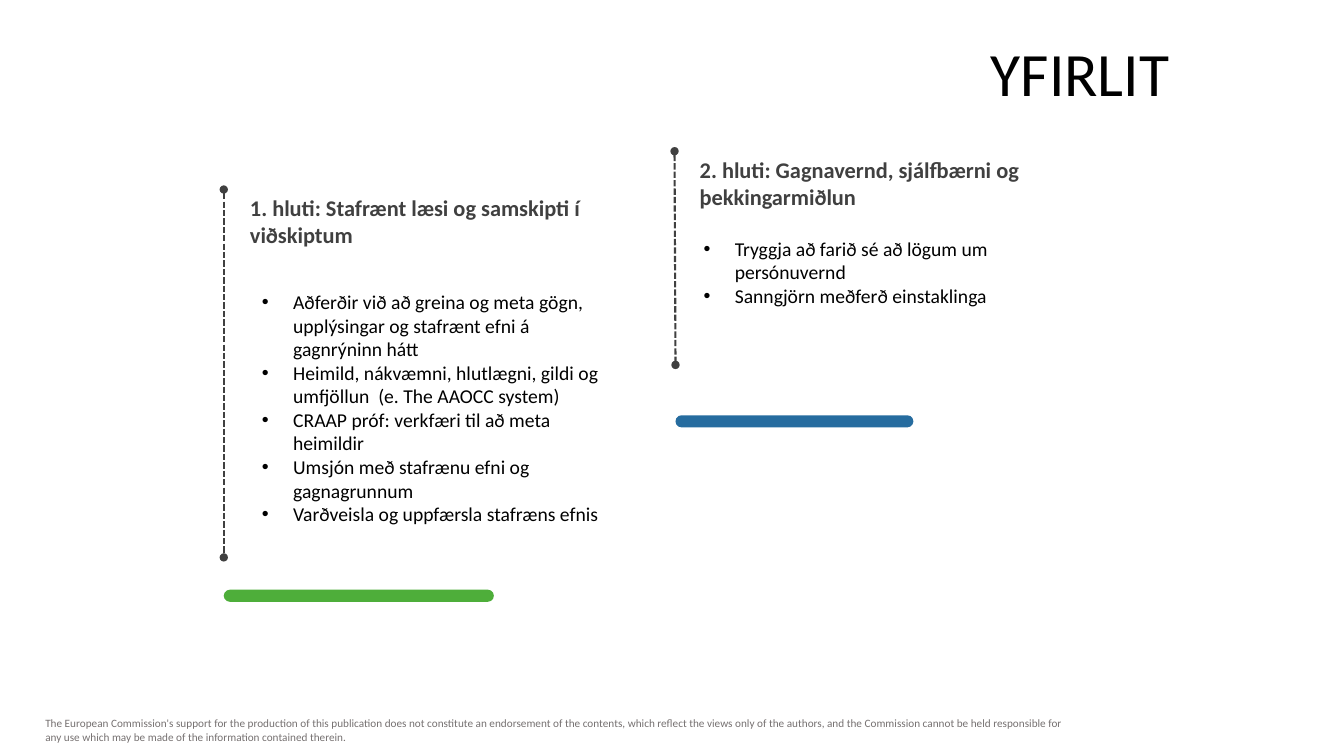
from dataclasses import dataclass

from lxml import etree
from pptx import Presentation
from pptx.dml.color import RGBColor
from pptx.enum.dml import MSO_LINE
from pptx.enum.shapes import MSO_CONNECTOR, MSO_SHAPE
from pptx.enum.text import MSO_ANCHOR, PP_ALIGN
from pptx.oxml.ns import qn
from pptx.util import Inches, Pt

STRAIGHT = MSO_CONNECTOR.STRAIGHT
ROUNDED = MSO_SHAPE.ROUNDED_RECTANGLE
DASHED = MSO_LINE.SQUARE_DOT
TOP, MIDDLE = MSO_ANCHOR.TOP, MSO_ANCHOR.MIDDLE
LEFT, RIGHT = PP_ALIGN.LEFT, PP_ALIGN.RIGHT

FONT = "Calibri"
BLACK, DARK, GREY = "000000", "404040", "767171"
GREEN, BLUE = "4EAE3A", "266C9F"
WIDTH, HEIGHT = Inches(13.33), Inches(7.5)
BULLET_INDENT = Inches(0.31)
HEADING_INSET = Inches(0.12)
HEADING_HEIGHT = 8.53
BAR_HEIGHT = 1.6

DISCLAIMER = (
    "The European Commission's support for the production of this publication "
    "does not constitute an endorsement of the contents, which reflect the views "
    "only of the authors, and the Commission cannot be held responsible for any "
    "use which may be made of the information contained therein."
)


@dataclass
class Area:
    """Place and size in percent of the slide's width and height."""
    left: float
    top: float
    width: float
    height: float

    def emu(self) -> tuple[int, int, int, int]:
        return (across(self.left), down(self.top),
                across(self.width), down(self.height))


@dataclass
class Style:
    size: int
    color: str = BLACK
    bold: bool = False
    align: PP_ALIGN = LEFT
    bulleted: bool = False


@dataclass
class Section:
    heading: str
    topics: list[str]
    heading_area: Area
    topics_area: Area
    rule_top_x: float
    rule_bottom_x: float
    rule_bottom_y: float
    bar: Area
    color: str


TITLE_STYLE = Style(44, align=RIGHT)
HEADING_STYLE = Style(16, DARK, bold=True)
TOPIC_STYLE = Style(14, bulleted=True)
DISCLAIMER_STYLE = Style(8, GREY)

SECTIONS = [
    Section(
        "1. hluti: Stafrænt læsi og samskipti í viðskiptum",
        ["Aðferðir við að greina og meta gögn, upplýsingar og stafrænt efni á "
         "gagnrýninn hátt",
         "Heimild, nákvæmni, hlutlægni, gildi og umfjöllun  (e. The AAOCC system)",
         "CRAAP próf: verkfæri til að meta heimildir",
         "Umsjón með stafrænu efni og gagnagrunnum",
         "Varðveisla og uppfærsla stafræns efnis"],
        Area(17.7, 25.07, 31.13, HEADING_HEIGHT),
        Area(18.75, 37.73, 27.31, 32.8),
        16.65, 16.65, 73.73,
        Area(16.65, 78, 20.1, BAR_HEIGHT), GREEN),
    Section(
        "2. hluti: Gagnavernd, sjálfbærni og þekkingarmiðlun",
        ["Tryggja að farið sé að lögum um persónuvernd",
         "Sanngjörn meðferð einstaklinga"],
        Area(51.16, 20, 28.81, HEADING_HEIGHT),
        Area(51.61, 30.67, 29.63, 13.87),
        50.19, 50.26, 48.27,
        Area(50.26, 54.93, 17.7, BAR_HEIGHT), BLUE),
]


def across(percent: float) -> int:
    return round(WIDTH * percent / 100)


def down(percent: float) -> int:
    return round(HEIGHT * percent / 100)


def rgb(color: str) -> RGBColor:
    return RGBColor.from_string(color)


def add_bullet(para) -> None:
    properties = para._p.get_or_add_pPr()
    properties.set("marL", str(BULLET_INDENT))
    properties.set("indent", str(-BULLET_INDENT))
    etree.SubElement(properties, qn("a:buFont"), typeface="Arial")
    etree.SubElement(properties, qn("a:buChar"), char="•")


def add_text(page, area: Area, lines: list[str], style: Style, anchor=TOP):
    frame = page.shapes.add_textbox(*area.emu()).text_frame
    frame.word_wrap = True
    frame.vertical_anchor = anchor
    frame.text = "\n".join(lines)
    for para in frame.paragraphs:
        para.alignment = style.align
        if style.bulleted:
            add_bullet(para)
        for span in para.runs:
            span.font.name = FONT
            span.font.size = Pt(style.size)
            span.font.bold = style.bold
            span.font.color.rgb = rgb(style.color)
    return frame


def add_bar(page, area: Area, color: str) -> None:
    bar = page.shapes.add_shape(ROUNDED, *area.emu())
    bar.adjustments[0] = 0.5
    bar.shadow.inherit = False
    bar.fill.solid()
    bar.fill.fore_color.rgb = rgb(color)
    bar.line.fill.background()


def add_rule(page, section: Section) -> None:
    """Draw the dashed line with round ends at the left of a section."""
    rule = page.shapes.add_connector(
        STRAIGHT,
        across(section.rule_top_x), down(section.heading_area.top),
        across(section.rule_bottom_x), down(section.rule_bottom_y))
    rule.line.width = Pt(1.5)
    rule.line.color.rgb = rgb(DARK)
    rule.line.dash_style = DASHED
    outline = rule.line._get_or_add_ln()
    for end in ("a:headEnd", "a:tailEnd"):
        etree.SubElement(outline, qn(end), type="oval")
    etree.SubElement(rule._element.spPr, qn("a:effectLst"))


def add_section(page, section: Section) -> None:
    add_bar(page, section.bar, section.color)
    add_text(page, section.topics_area, section.topics, TOPIC_STYLE)
    heading = add_text(page, section.heading_area, [section.heading], HEADING_STYLE)
    heading.margin_left = heading.margin_right = HEADING_INSET
    add_rule(page, section)


def main() -> None:
    deck = Presentation()
    deck.slide_width, deck.slide_height = WIDTH, HEIGHT
    page = deck.slides.add_slide(deck.slide_layouts[6])
    add_text(page, Area(2.63, 94.13, 78.47, 4.93), [DISCLAIMER], DISCLAIMER_STYLE)
    title = add_text(page, Area(23.18, 4.93, 64.59, 10.53), ["YFIRLIT"],
                     TITLE_STYLE, MIDDLE)
    title.paragraphs[0].line_spacing = 0.9
    for section in SECTIONS:
        add_section(page, section)
    deck.save("out.pptx")


if __name__ == "__main__":
    main()
